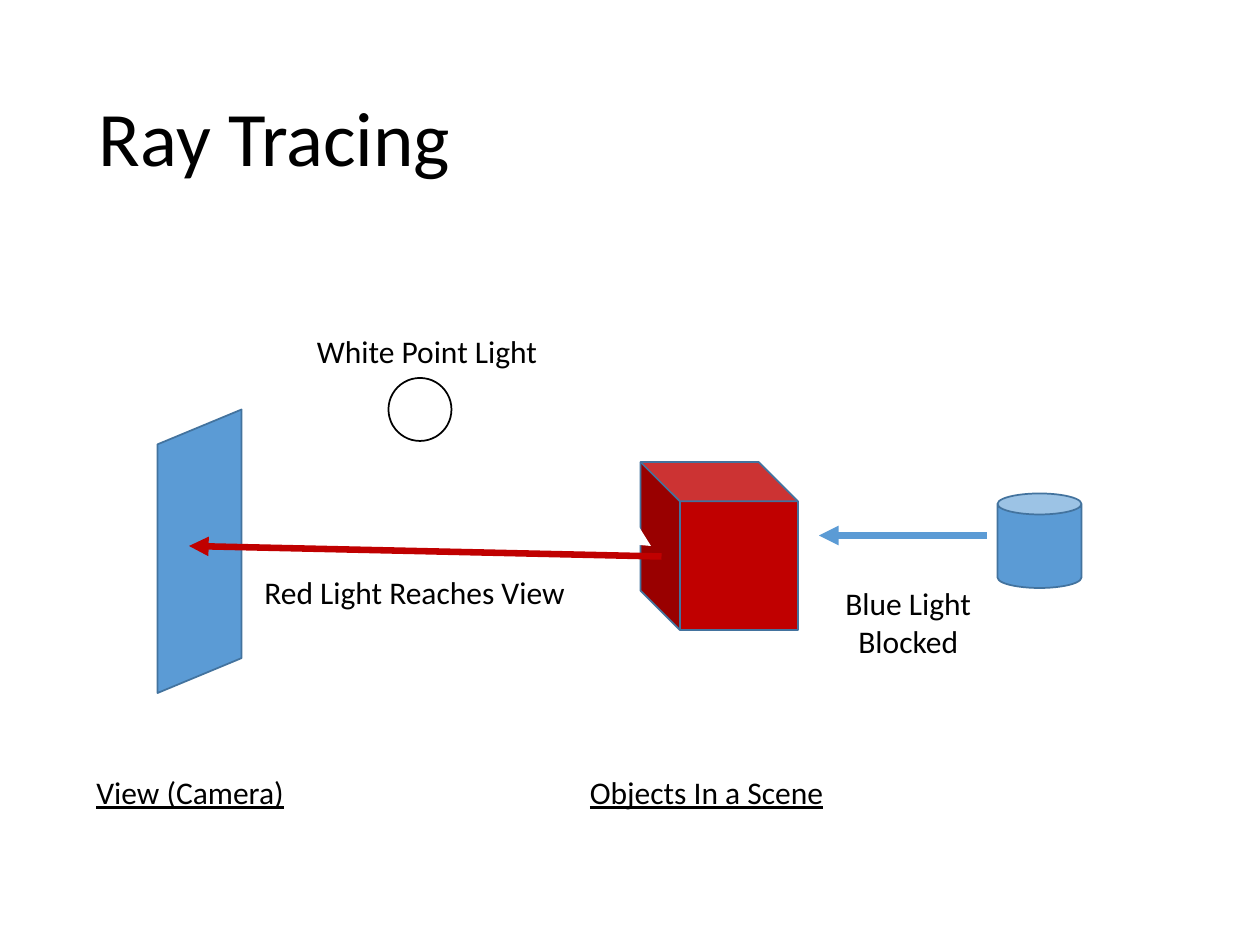
from lxml.etree import SubElement
from pptx import Presentation
from pptx.dml.color import RGBColor
from pptx.enum.shapes import MSO_CONNECTOR, MSO_SHAPE
from pptx.enum.text import MSO_ANCHOR, PP_ALIGN
from pptx.oxml.ns import qn
from pptx.util import Pt

BLUE, RED, WHITE, BLACK, EDGE = "5B9BD5", "C00000", "FFFFFF", "000000", "43739E"

SOLIDS = [
    (MSO_SHAPE.PARALLELOGRAM, (33, 291, 162, 48), BLUE, EDGE,
     {"rotation": 270, "flip": True, "adjustment": 0.415}),
    (MSO_SHAPE.CUBE, (366, 264, 90, 96), RED, EDGE, {"flip": True}),
    (MSO_SHAPE.CAN, (570, 282, 48, 54), BLUE, EDGE, {}),
    (MSO_SHAPE.OVAL, (222, 216, 36, 36), WHITE, BLACK, {}),
]
RAYS = [
    ((264, 246), (372, 312), WHITE),
    ((378, 318), (108, 312), RED),
    ((564, 306), (468, 306), BLUE),
]
TEXTS = [
    ("Ray Tracing", (49.5, 28.75, 621, 104.5),
     {"size": 44, "wrap": True, "anchor": MSO_ANCHOR.MIDDLE, "spacing": 0.9}),
    ("View (Camera)", (48, 438, 123, 29), {"underline": True}),
    ("Objects In a Scene", (330, 438, 150, 29), {"underline": True}),
    ("White Point Light", (174, 186, 142, 29), {}),
    ("Red Light Reaches View", (144, 324, 189, 29), {}),
    ("Blue Light Blocked", (474, 330, 90, 51), {"wrap": True, "align": PP_ALIGN.CENTER}),
]


def color(value):
    return RGBColor.from_string(value)


def add_solid(slide, kind, place, fill, edge, rotation=0, flip=False, adjustment=None):
    solid = slide.shapes.add_shape(kind, *map(Pt, place))
    solid.shadow.inherit = False
    solid.fill.solid()
    solid.fill.fore_color.rgb = color(fill)
    solid.line.color.rgb = color(edge)
    solid.line.width = Pt(1)
    solid.rotation = rotation
    if flip:
        solid._element.spPr.find(qn("a:xfrm")).set("flipH", "1")
    if adjustment is not None:
        solid.adjustments[0] = adjustment


def add_ray(slide, start, end, stroke):
    ray = slide.shapes.add_connector(MSO_CONNECTOR.STRAIGHT, *map(Pt, start + end))
    ray.line.color.rgb = color(stroke)
    ray.line.width = Pt(3.75)
    SubElement(ray.line._get_or_add_ln(), qn("a:tailEnd"), type="triangle")
    SubElement(ray._element.spPr, qn("a:effectLst"))


def add_text(slide, text, place, size=18, wrap=False, underline=None,
             align=PP_ALIGN.LEFT, anchor=MSO_ANCHOR.TOP, spacing=None):
    frame = slide.shapes.add_textbox(*map(Pt, place)).text_frame
    frame.word_wrap = wrap
    frame.vertical_anchor = anchor
    para = frame.paragraphs[0]
    para.alignment = align
    para.line_spacing = spacing
    span = para.add_run()
    span.text = text
    span.font.name = "Calibri"
    span.font.size = Pt(size)
    span.font.underline = underline
    span.font.color.rgb = color(BLACK)


def main():
    """Build the ray tracing slide."""
    deck = Presentation()
    deck.slide_width, deck.slide_height = Pt(720), Pt(540)
    slide = deck.slides.add_slide(deck.slide_layouts[6])
    for kind, place, fill, edge, options in SOLIDS:
        add_solid(slide, kind, place, fill, edge, **options)
    for start, end, stroke in RAYS:
        add_ray(slide, start, end, stroke)
    for text, place, options in TEXTS:
        add_text(slide, text, place, **options)
    deck.save("out.pptx")


if __name__ == "__main__":
    main()
